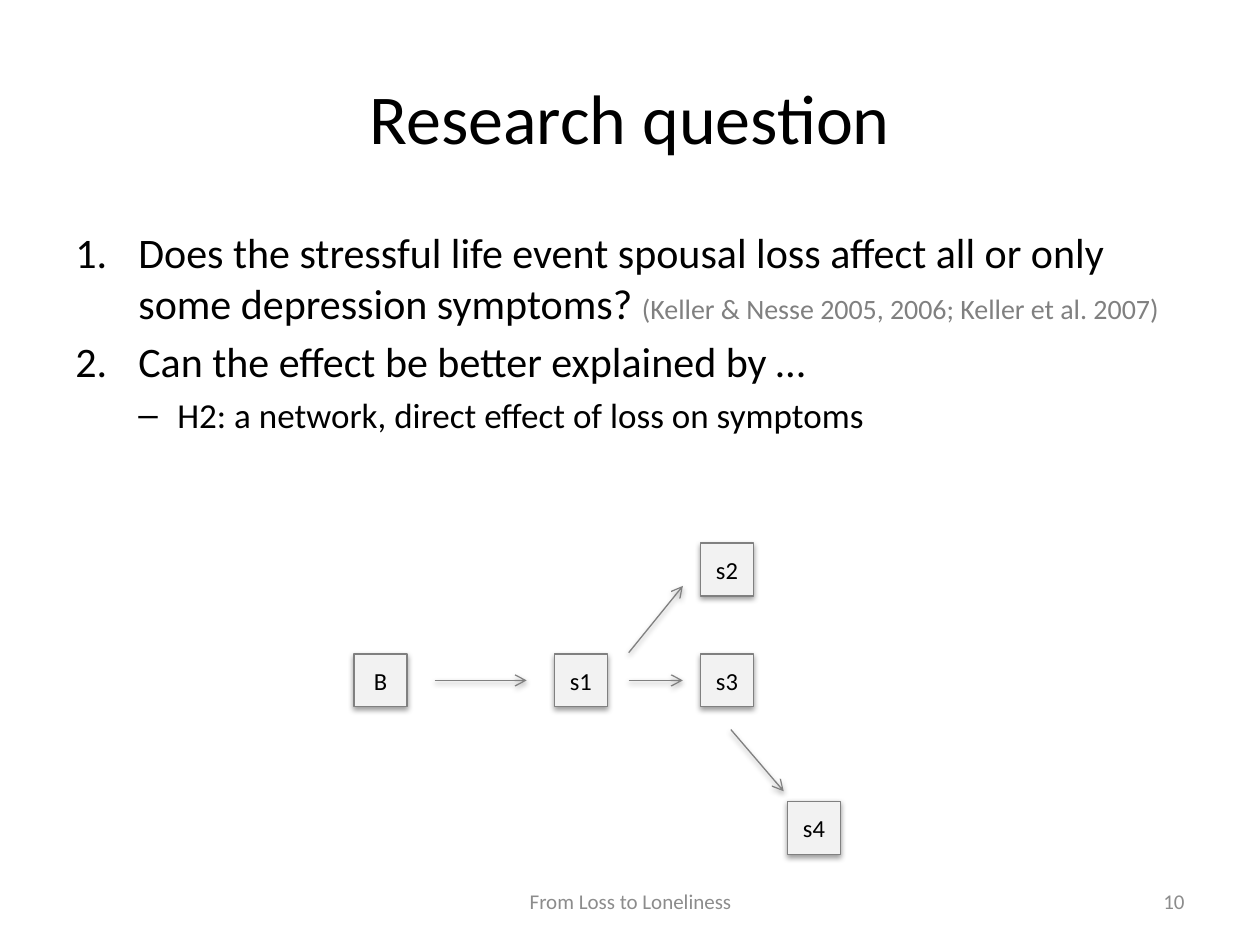
from lxml import etree
from pptx import Presentation
from pptx import util as u
from pptx.dml.color import RGBColor
from pptx.enum import shapes, text
from pptx.oxml import ns

BLACK = RGBColor(0x00, 0x00, 0x00)
GRAY = RGBColor(0x80, 0x80, 0x80)
MUTED = RGBColor(0x8C, 0x8C, 0x8C)
PALE = RGBColor(0xF2, 0xF2, 0xF2)
COLS, ROWS = 100, 75
LEFT, MID, RIGHT = text.PP_ALIGN.LEFT, text.PP_ALIGN.CENTER, text.PP_ALIGN.RIGHT


def add(node, tag, **attrs):
    return etree.SubElement(node, ns.qn(tag), {k: str(v) for k, v in attrs.items()})


def write(para, words, size=12, color=BLACK, align=LEFT, font="Calibri"):
    para.alignment = align
    run = para.add_run()
    run.text = words
    run.font.size = u.Pt(size)
    run.font.name = font
    run.font.color.rgb = color


class Deck:
    def __init__(self):
        self.show = Presentation()
        self.show.slide_width = u.Inches(10)
        self.show.slide_height = u.Inches(7.5)
        self.slide = self.show.slides.add_slide(self.show.slide_layouts[6])

    def spot(self, col, row):
        return (round(self.show.slide_width * col / COLS),
                round(self.show.slide_height * row / ROWS))

    def frame(self, col, row, wide, high, anchor=text.MSO_ANCHOR.MIDDLE):
        box = self.slide.shapes.add_textbox(*self.spot(col, row), *self.spot(wide, high))
        box.text_frame.word_wrap = True
        box.text_frame.vertical_anchor = anchor
        return box.text_frame

    def label(self, place, words, **style):
        write(self.frame(*place).paragraphs[0], words, **style)

    def list(self, place, items):
        frame = self.frame(*place, anchor=text.MSO_ANCHOR.TOP)
        for i, (level, runs) in enumerate(items):
            para = frame.add_paragraph() if i else frame.paragraphs[0]
            para.level = level
            for words, size, color in runs:
                write(para, words, size=size, color=color)
            para.space_before = u.Pt(runs[0][1] * 0.2)
            left, hang = ((0.5, 0.5), (0.81, 0.31))[level]
            props = para._p.get_or_add_pPr()
            props.set("marL", str(u.Inches(left)))
            props.set("indent", str(-u.Inches(hang)))
            if level:
                add(props, "a:buFont", typeface="Arial")
                add(props, "a:buChar", char="–")
            else:
                add(props, "a:buFont", typeface="+mj-lt")
                add(props, "a:buAutoNum", type="arabicPeriod")

    def edge(self, item):
        item.line.color.rgb = GRAY
        item.line.width = u.Pt(0.75)

    def shade(self, item):
        glow = add(add(item.element.spPr, "a:effectLst"), "a:outerShdw", blurRad=40000,
                   dist=20000, dir=5400000, rotWithShape=0)
        add(add(glow, "a:srgbClr", val=BLACK), "a:alpha", val=38000)

    def node(self, name, col, row, side=4.2):
        box = self.slide.shapes.add_shape(
            shapes.MSO_SHAPE.RECTANGLE, *self.spot(col, row), *self.spot(side, side))
        box.fill.solid()
        box.fill.fore_color.rgb = PALE
        self.edge(box)
        self.shade(box)
        box.text_frame.word_wrap = False
        box.text_frame.vertical_anchor = text.MSO_ANCHOR.MIDDLE
        write(box.text_frame.paragraphs[0], name, size=14, align=MID)

    def arrow(self, start, end):
        line = self.slide.shapes.add_connector(
            shapes.MSO_CONNECTOR.STRAIGHT, *self.spot(*start), *self.spot(*end))
        self.edge(line)
        add(line.element.spPr.find(ns.qn("a:ln")), "a:tailEnd", type="arrow")
        self.shade(line)


def main():
    deck = Deck()
    deck.label((5, 3, 90, 12.5), "Research question", size=40, align=MID)
    deck.list((5, 17.5, 90, 49.5), [
        (0, [("Does the stressful life event spousal loss affect all or only "
              "some depression symptoms? ", 24, BLACK),
             ("(Keller & Nesse 2005, 2006; Keller et al. 2007)", 16, GRAY)]),
        (0, [("Can the effect be better explained by …", 24, BLACK)]),
        (1, [("H2: a network, direct effect of loss on symptoms", 20, BLACK)]),
    ])
    deck.label((71.7, 69.5, 23.3, 4), "10", color=MUTED, align=RIGHT)
    deck.label((34.2, 69.5, 31.7, 4), "From Loss to Loneliness", color=MUTED, align=MID)

    base, axis = 51.9, 54
    for name, col, row in (("B", 28.1, base), ("s1", 44, base), ("s2", 55.6, 43.1),
                           ("s3", 55.6, base), ("s4", 62.5, 63.6)):
        deck.node(name, col, row)
    for start, end in (((34.5, axis), (41.8, axis)), ((49.9, axis), (54.2, axis)),
                       ((49.9, 51.8), (54.2, 46.5)), ((58, 57.9), (62.2, 62.8))):
        deck.arrow(start, end)
    deck.show.save("out.pptx")


if __name__ == "__main__":
    main()
